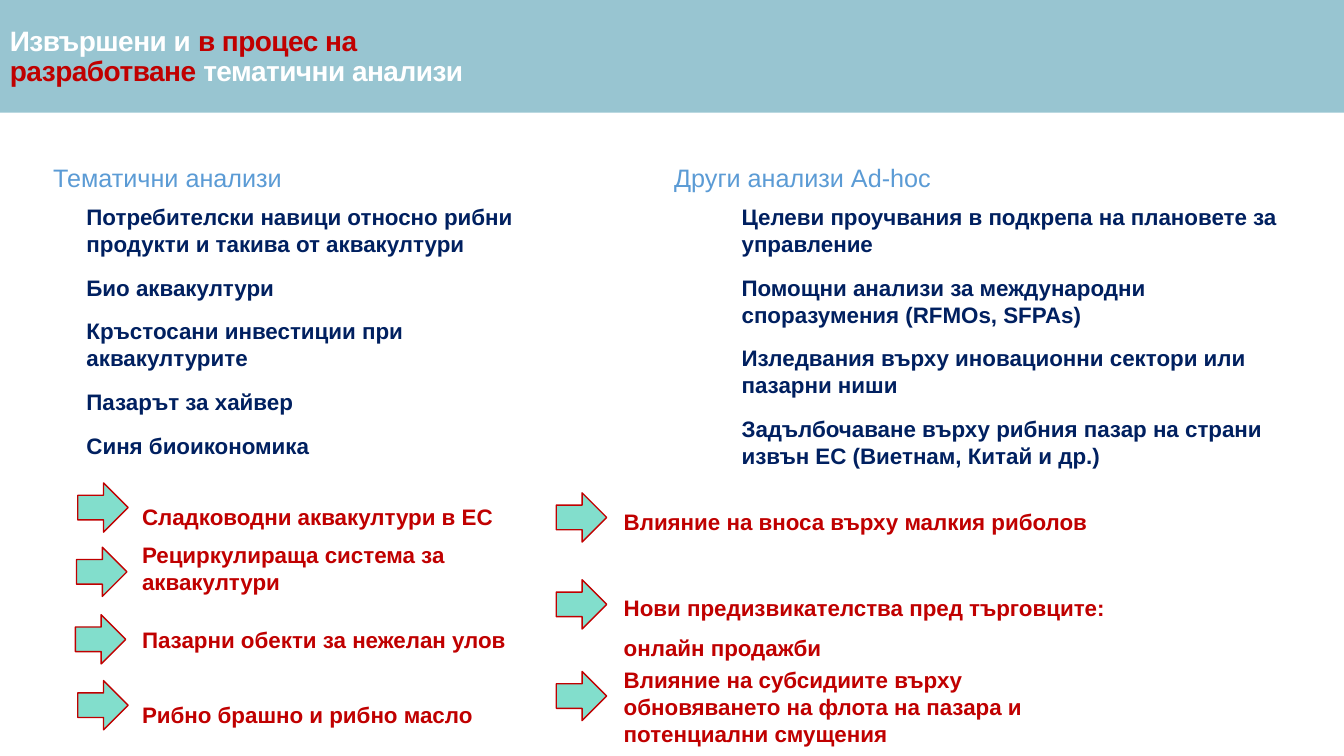
from pptx import Presentation
from pptx.dml.color import RGBColor
from pptx.enum.shapes import MSO_SHAPE
from pptx.enum.text import MSO_ANCHOR, MSO_AUTO_SIZE
from pptx.util import Cm, Pt

WHITE, RED, NAVY, BLUE = "FFFFFF", "C00000", "002060", "5B9BD5"
BAND, MINT = "98C5D1", "82DECC"
SLIDE_WIDTH, SLIDE_HEIGHT = 33.87, 19.05
ARROW_WIDTH, ARROW_HEIGHT = 1.27, 1.24

TITLE = [("Извършени и ", WHITE), ("в процес на разработване", RED),
         (" тематични анализи", WHITE)]
THEMATIC = ["Потребителски навици относно рибни продукти и такива от аквакултури",
            "Био аквакултури",
            "Кръстосани инвестиции при аквакултурите",
            "Пазарът за хайвер",
            "Синя биоикономика"]
AD_HOC = ["Целеви проучвания в подкрепа на плановете за управление",
          "Помощни анализи за международни споразумения (RFMOs, SFPAs)",
          "Изледвания върху иновационни сектори или пазарни ниши",
          "Задълбочаване върху рибния пазар на страни извън ЕС (Виетнам, Китай и др.)"]
# arrow left, arrow top, text top, text width, text height, line spacing, topic
LEFT_TOPICS = [
    (1.96, 12.17, 12.22, 11.84, 1.14, 1.5, "Сладководни аквакултури в ЕС"),
    (1.93, 13.79, 13.51, 10.08, 1.63, 1.0, "Рециркулираща система за аквакултури"),
    (1.9, 15.49, 15.65, 9.98, 0.94, 1.0, "Пазарни обекти за нежелан улов"),
    (1.96, 17.15, 17.2, 11.84, 1.14, 1.5, "Рибно брашно и рибно масло")]
RIGHT_TOPICS = [
    (14.02, 12.42, 12.34, 13.28, 1.14, 1.5, "Влияние на вноса върху малкия риболов"),
    (14.02, 14.61, 14.5, 13.74, 2.18, 1.5,
     "Нови предизвикателства пред търговците: онлайн продажби"),
    (14.02, 16.92, 16.66, 11.84, 2.31, 1.0,
     "Влияние на субсидиите върху обновяването на флота на пазара и потенциални смущения")]


def color(hex_code):
    """Turn a hex string into a colour."""
    return RGBColor.from_string(hex_code)


def add_block(slide, box, shape_type, fill, outline=None):
    """Draw a flat preset shape in the box."""
    block = slide.shapes.add_shape(shape_type, *map(Cm, box))
    block.shadow.inherit = False
    block.fill.solid()
    block.fill.fore_color.rgb = color(fill)
    if outline:
        block.line.color.rgb = color(outline)
        block.line.width = Pt(1)
    else:
        block.line.fill.background()


def add_text(slide, box, texts, size, hex_code, bold=True, spacing=1.0):
    """Write one paragraph per text, set apart by 12 points."""
    frame = slide.shapes.add_textbox(*map(Cm, box)).text_frame
    frame.word_wrap = True
    frame.auto_size = MSO_AUTO_SIZE.SHAPE_TO_FIT_TEXT
    for index, text in enumerate(texts):
        paragraph = frame.add_paragraph() if index else frame.paragraphs[0]
        paragraph.text = text
        paragraph.line_spacing = spacing
        if index:
            paragraph.space_before = Pt(12)
        font = paragraph.font
        font.name, font.size, font.bold = "Arial", Pt(size), bold
        font.color.rgb = color(hex_code)


def add_header(slide, box):
    """Draw the band with the two-coloured title at its left."""
    left, top, width, height = box
    add_block(slide, box, MSO_SHAPE.RECTANGLE, BAND)
    frame = slide.shapes.add_textbox(Cm(left), Cm(top + 0.13), Cm(12.07), Cm(2.21)).text_frame
    frame.word_wrap = True
    frame.vertical_anchor = MSO_ANCHOR.BOTTOM
    paragraph = frame.paragraphs[0]
    paragraph.line_spacing = 0.9
    font = paragraph.font
    font.name, font.size, font.bold = "Arial", Pt(20), True
    for text, hex_code in TITLE:
        run = paragraph.add_run()
        run.text = text
        run.font.color.rgb = color(hex_code)
        run._r.get_or_add_rPr().set("spc", "-40")


def add_analyses(slide, box, heading, analyses, indent):
    """Write a heading and, indented below it, the list of analyses."""
    left, top, width, height = box
    add_text(slide, (left, top, 12.83, 0.94), [heading], 18, BLUE, bold=False, spacing=0.9)
    list_box = (left + indent, top + 0.96, width - indent, height - 0.96)
    add_text(slide, list_box, analyses, 16, NAVY)


def add_topics(slide, text_left, topics):
    """Place the topics in progress, each behind its arrow."""
    for arrow_left, arrow_top, top, width, height, spacing, topic in topics:
        add_block(slide, (arrow_left, arrow_top, ARROW_WIDTH, ARROW_HEIGHT),
                  MSO_SHAPE.RIGHT_ARROW, MINT, RED)
        add_text(slide, (text_left, top, width, height), [topic], 16, RED, spacing=spacing)


def main():
    """Build the slide and save it."""
    deck = Presentation()
    deck.slide_width, deck.slide_height = Cm(SLIDE_WIDTH), Cm(SLIDE_HEIGHT)
    slide = deck.slides.add_slide(deck.slide_layouts[6])
    add_header(slide, (0, 0, SLIDE_WIDTH, 2.84))
    add_analyses(slide, (1.09, 4.04, 13.49, 7.72), "Тематични анализи", THEMATIC, 0.84)
    add_analyses(slide, (16.74, 4.04, 16.2, 7.97), "Други анализи Аd-hoc", AD_HOC, 1.7)
    add_topics(slide, 3.33, LEFT_TOPICS)
    add_topics(slide, 15.47, RIGHT_TOPICS)
    deck.save("out.pptx")


if __name__ == "__main__":
    main()
